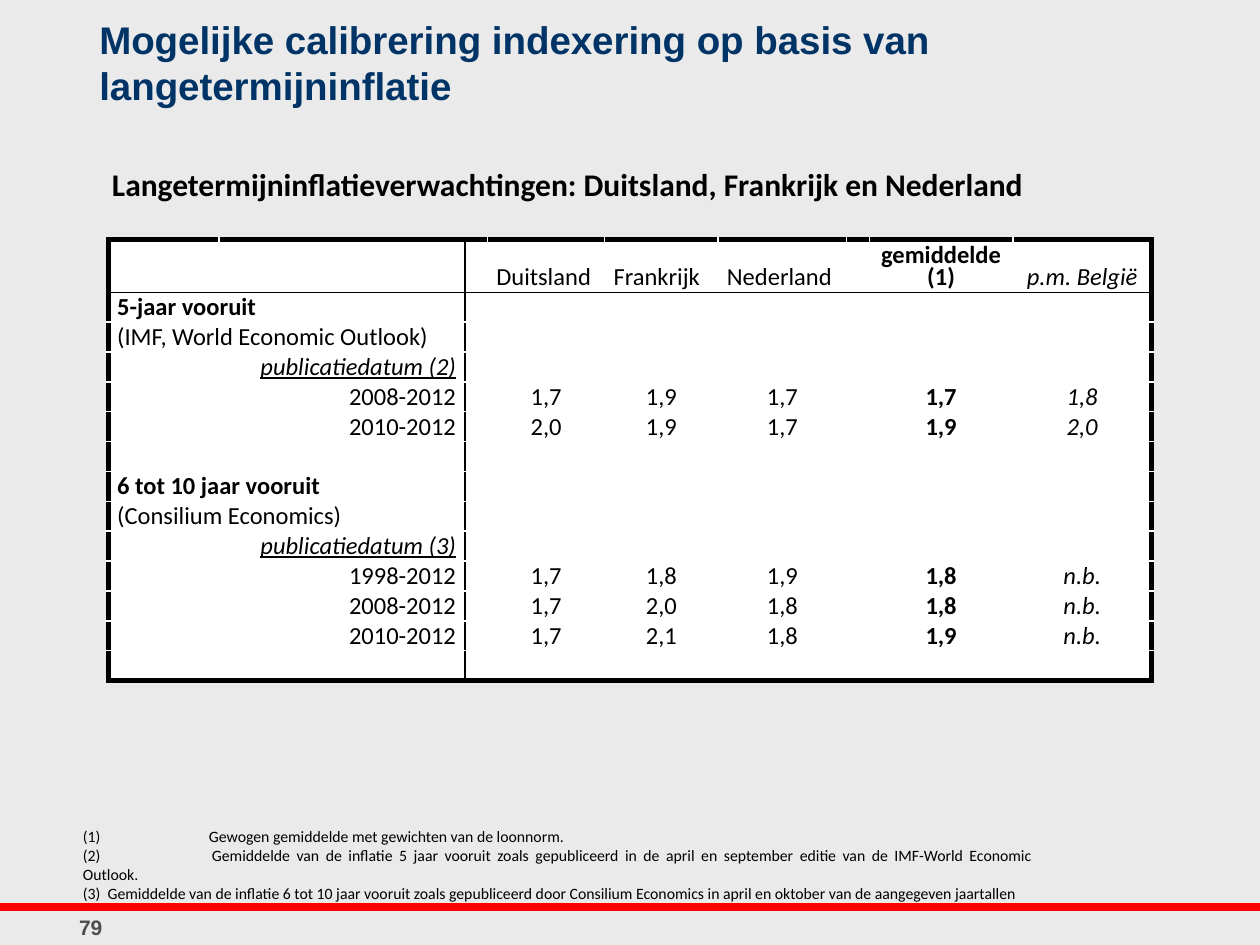
from lxml import etree
from pptx import Presentation
from pptx.dml.color import RGBColor
from pptx.enum.shapes import MSO_CONNECTOR
from pptx.enum.text import MSO_ANCHOR, PP_ALIGN
from pptx.oxml.ns import qn
from pptx.util import Inches, Pt

LINE = MSO_CONNECTOR.STRAIGHT
TOP, MIDDLE, BOTTOM = MSO_ANCHOR.TOP, MSO_ANCHOR.MIDDLE, MSO_ANCHOR.BOTTOM
LEFT, CENTER, RIGHT = PP_ALIGN.LEFT, PP_ALIGN.CENTER, PP_ALIGN.RIGHT
JUSTIFY = PP_ALIGN.JUSTIFY
BLACK = RGBColor(0x00, 0x00, 0x00)
WHITE = RGBColor(0xFF, 0xFF, 0xFF)
GREY = RGBColor(0xEA, 0xEA, 0xEA)
DARK = RGBColor(0x4D, 0x4D, 0x4D)
NAVY = RGBColor(0x00, 0x33, 0x66)
RED = RGBColor(0xFF, 0x00, 0x00)


def write(par, text, align, color=BLACK, **form):
    """Fill a paragraph and set its font from the format values."""
    par.text = text
    par.alignment = align
    font = par.runs[0].font if par.runs else par.font
    font.color.rgb = color
    for key, value in form.items():
        setattr(font, key, value)


def border(cell, side, width):
    """Draw one cell side; call in the order L, R, T, B and before the fill."""
    props = cell._tc.get_or_add_tcPr()
    line = etree.SubElement(props, qn("a:ln" + side), w=str(Pt(width)))
    fill = etree.SubElement(line, qn("a:solidFill"))
    etree.SubElement(fill, qn("a:srgbClr"), val=str(BLACK))


prs = Presentation()
prs.slide_width, prs.slide_height = Inches(10), Inches(7.5)
slide = prs.slides.add_slide(prs.slide_layouts[6])
slide.background.fill.solid()
slide.background.fill.fore_color.rgb = GREY

rule = slide.shapes.add_connector(LINE, 0, Inches(7.2), Inches(10), Inches(7.2))
rule.line.color.rgb = RED
rule.line.width = Pt(4.5)
etree.SubElement(rule._element.spPr, qn("a:effectLst"))

# Table
HEAD = ["", "", "", "Duitsland", "Frankrijk", "Nederland", "",
        "gemiddelde (1)", "p.m. België"]
ROWS = [
    ("5-jaar vooruit", ""),
    ("(IMF, World Economic Outlook)", ""),
    ("publicatiedatum (2)", ""),
    ("2008-2012", "1,7 1,9 1,7 1,7 1,8"),
    ("2010-2012", "2,0 1,9 1,7 1,9 2,0"),
    ("", ""),
    ("6 tot 10 jaar vooruit", ""),
    ("(Consilium Economics)", ""),
    ("publicatiedatum (3)", ""),
    ("1998-2012", "1,7 1,8 1,9 1,8 n.b."),
    ("2008-2012", "1,7 2,0 1,8 1,8 n.b."),
    ("2010-2012", "1,7 2,1 1,8 1,9 n.b."),
    ("", ""),
]
WIDTHS = [0.88, 1.95, 0.18, 0.93, 0.9, 1.02, 0.18, 1.14, 1.1]
DATA = [3, 4, 5, 7, 8]
WIDE = [1, 2, 7, 8]
BOLD = [1, 7]
DATES = [3, 9]
MEAN, BELGIUM = 7, 8

grid = [HEAD]
for num, (label, values) in enumerate(ROWS, 1):
    line = [""] * len(WIDTHS)
    line[0 if num in WIDE else 1] = label
    for col, value in zip(DATA, values.split()):
        line[col] = value
    grid.append(line)

last_row, last_col = len(grid) - 1, len(WIDTHS) - 1
frame = slide.shapes.add_table(len(grid), len(WIDTHS), Inches(0.86), Inches(1.9),
                               Inches(8.28), Inches(3.33))
table = frame.table
table.first_row = table.horz_banding = False
for col, width in zip(table.columns, WIDTHS):
    col.width = Inches(width)
for num, row in enumerate(table.rows):
    row.height = Inches(2.91 / len(ROWS)) if num else Inches(0.42)

for r, line in enumerate(grid):
    for c, text in enumerate(line):
        cell = table.cell(r, c)
        cell.vertical_anchor = BOTTOM
        cell.margin_left = cell.margin_right = Inches(0.07)
        cell.margin_top = cell.margin_bottom = 0
        if c in (0, 2):
            border(cell, "L", 1 if c else 3)
        if c == last_col:
            border(cell, "R", 3)
        elif c == 1 or (c == 0 and r in WIDE):
            border(cell, "R", 1)
        if r in (0, 1):
            border(cell, "T", 1 if r else 3)
        if r in (0, last_row):
            border(cell, "B", 3 if r else 1)
        cell.fill.solid()
        cell.fill.fore_color.rgb = WHITE

        if c == 1:
            align = RIGHT
        elif c >= MEAN or (r and c):
            align = CENTER
        else:
            align = LEFT
        date = c == 1 and r in DATES
        par = cell.text_frame.paragraphs[0]
        par.line_spacing = Pt(13)
        write(par, text, align, name="Calibri", size=Pt(14),
              bold=c == MEAN or (c == 0 and r in BOLD),
              italic=c == BELGIUM or date, underline=date)
for r in WIDE:
    table.cell(r, 0).merge(table.cell(r, 1))

# Text boxes
NOTES = [
    "(1) \tGewogen gemiddelde met gewichten van de loonnorm.",
    "(2) \tGemiddelde van de inflatie 5 jaar vooruit zoals gepubliceerd in de april "
    "en september editie van de IMF-World Economic Outlook.",
    "(3)  Gemiddelde van de inflatie 6 tot 10 jaar vooruit zoals gepubliceerd door "
    "Consilium Economics in april en oktober van de aangegeven jaartallen",
]
TITLE = "Mogelijke calibrering indexering op basis van langetermijninflatie"
SUB = "Langetermijninflatieverwachtingen: Duitsland, Frankrijk en Nederland"
BOXES = [
    ((0.69, 0.08, 8.84, 0.41), TOP, [TITLE], LEFT,
     dict(name="Arial", size=Pt(22), bold=True, color=NAVY)),
    ((0.28, 7.21, 0.88, 0.29), TOP, ["79"], CENTER,
     dict(name="Arial", size=Pt(12), bold=True, color=DARK)),
    ((0.56, 6.58, 7.72, 0.56), MIDDLE, NOTES, JUSTIFY,
     dict(name="Calibri", size=Pt(9))),
    ((0.79, 1.26, 7.55, 0.4), MIDDLE, [SUB], JUSTIFY,
     dict(name="Calibri", size=Pt(18), bold=True)),
]
for place, anchor, texts, align, form in BOXES:
    box = slide.shapes.add_textbox(*map(Inches, place)).text_frame
    box.word_wrap = True
    box.vertical_anchor = anchor
    for num, text in enumerate(texts):
        par = box.add_paragraph() if num else box.paragraphs[0]
        if "\t" in text:
            tabs = etree.SubElement(par._p.get_or_add_pPr(), qn("a:tabLst"))
            etree.SubElement(tabs, qn("a:tab"), pos=str(Inches(1)), algn="l")
        write(par, text, align, **form)

prs.save("out.pptx")
